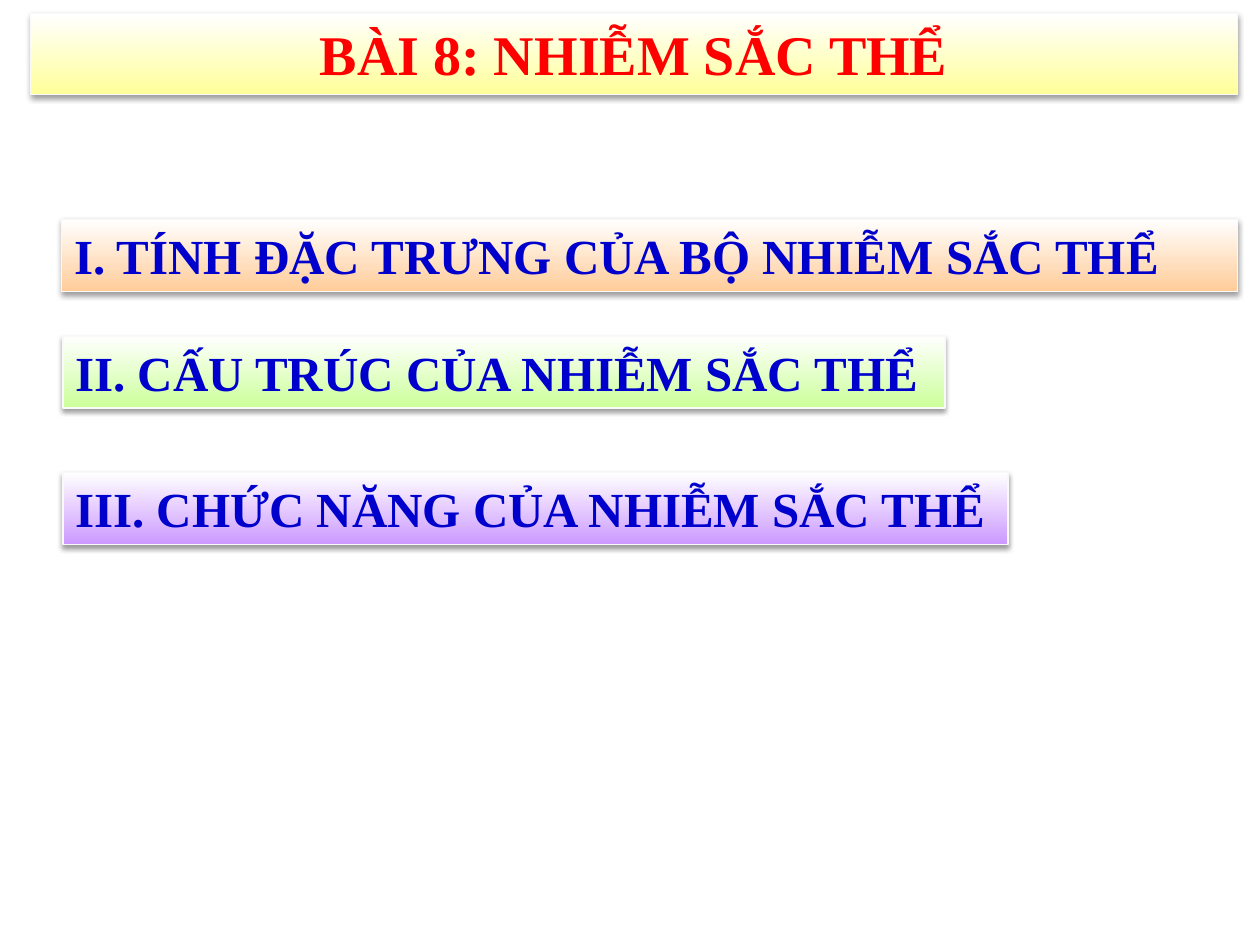
from lxml.etree import SubElement
from pptx import Presentation
from pptx.dml.color import RGBColor
from pptx.enum.shapes import MSO_SHAPE
from pptx.enum.text import MSO_ANCHOR, MSO_AUTO_SIZE, PP_ALIGN
from pptx.oxml.ns import qn
from pptx.util import Pt

RED = RGBColor(0xFF, 0x00, 0x00)
BLUE = RGBColor(0x00, 0x00, 0xCC)
WHITE = RGBColor(0xFF, 0xFF, 0xFF)
BORDER = RGBColor(0xF9, 0xF9, 0xF9)
YELLOW = RGBColor(0xFF, 0xFF, 0x99)
ORANGE = RGBColor(0xFF, 0xCC, 0x99)
GREEN = RGBColor(0xCC, 0xFF, 0x99)
PURPLE = RGBColor(0xCC, 0x99, 0xFF)


def add_shadow(banner):
    banner.shadow.inherit = False
    effects = banner._element.spPr.find(qn("a:effectLst"))
    shadow = SubElement(effects, qn("a:outerShdw"), blurRad=str(Pt(3.1)),
                        dist=str(Pt(1.6)), dir="5400000", rotWithShape="0")
    shade = SubElement(shadow, qn("a:srgbClr"), val="000000")
    SubElement(shade, qn("a:alpha"), val="38000")


prs = Presentation()
prs.slide_width, prs.slide_height = Pt(720), Pt(540)
slide = prs.slides.add_slide(prs.slide_layouts[6])

LEFT, CENTER = PP_ALIGN.LEFT, PP_ALIGN.CENTER
banners = [
    ("I. TÍNH ĐẶC TRƯNG CỦA BỘ NHIỄM SẮC THỂ", 35.3, 125.3, 671.8, 41.2, ORANGE, BLUE, 28, LEFT),
    ("BÀI 8: NHIỄM SẮC THỂ", 17.3, 7.9, 689.8, 46.1, YELLOW, RED, 32, CENTER),
    ("III. CHỨC NĂNG CỦA NHIỄM SẮC THỂ", 36, 270, 540, 41.2, PURPLE, BLUE, 28, LEFT),
    ("II. CẤU TRÚC CỦA NHIỄM SẮC THỂ", 36, 192, 504, 41.2, GREEN, BLUE, 28, LEFT),
]

for heading, left, top, width, height, tint, ink, size, align in banners:
    banner = slide.shapes.add_shape(MSO_SHAPE.RECTANGLE, Pt(left), Pt(top), Pt(width), Pt(height))
    banner.fill.gradient()
    banner.fill.gradient_angle = 90
    bottom_stop, top_stop = banner.fill.gradient_stops
    bottom_stop.color.rgb = tint
    top_stop.color.rgb = WHITE
    banner.line.color.rgb = BORDER
    banner.line.width = Pt(0.75)
    add_shadow(banner)

    frame = banner.text_frame
    frame.word_wrap = True
    frame.auto_size = MSO_AUTO_SIZE.SHAPE_TO_FIT_TEXT
    frame.vertical_anchor = MSO_ANCHOR.TOP
    paragraph = frame.paragraphs[0]
    paragraph.alignment = align
    run = paragraph.add_run()
    run.text = heading
    run.font.name = "Times New Roman"
    run.font.size = Pt(size)
    run.font.bold = True
    run.font.color.rgb = ink

prs.save("out.pptx")
